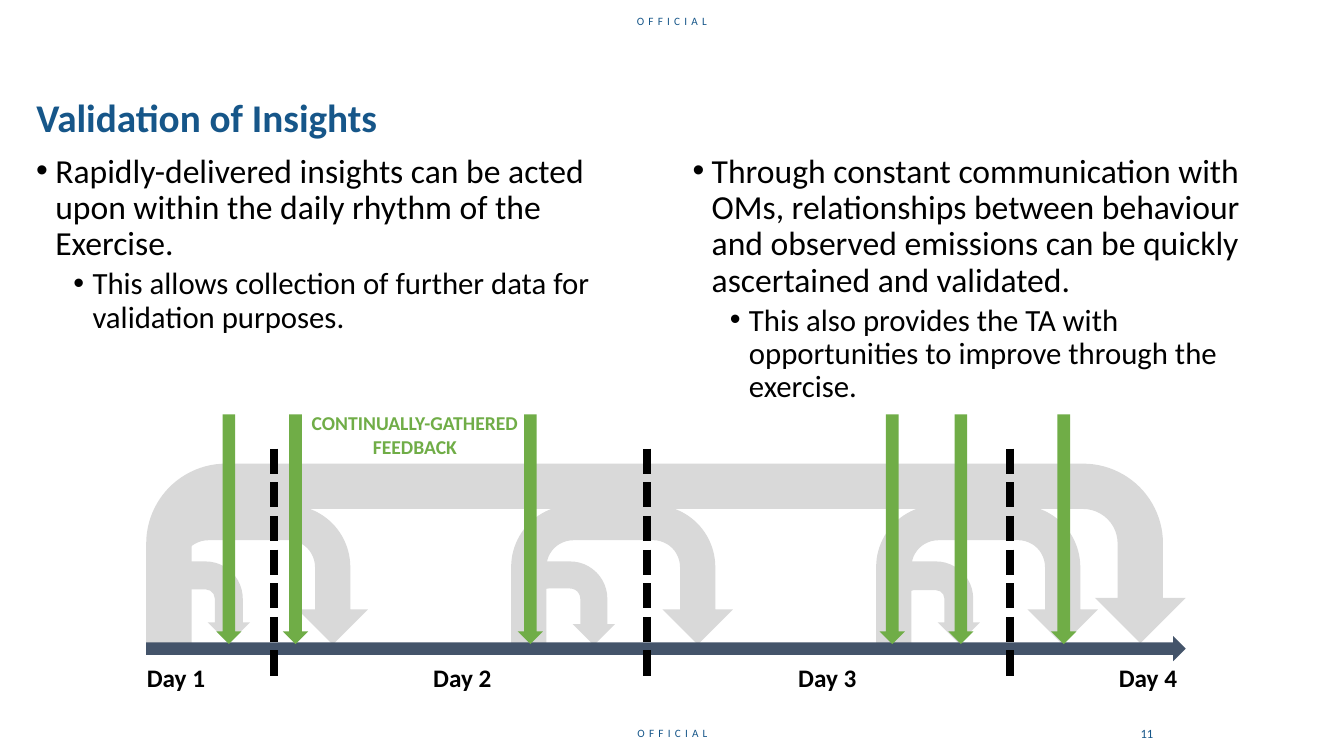
from lxml import etree
from pptx import Presentation
from pptx.dml.color import RGBColor
from pptx.enum.dml import MSO_LINE
from pptx.enum.shapes import MSO_CONNECTOR, MSO_SHAPE
from pptx.enum.text import MSO_ANCHOR, MSO_AUTO_SIZE, PP_ALIGN
from pptx.oxml.ns import qn
from pptx.util import Inches, Pt

LEFT, CENTER = PP_ALIGN.LEFT, PP_ALIGN.CENTER
TOP, MIDDLE = MSO_ANCHOR.TOP, MSO_ANCHOR.MIDDLE
RIGHT_ARROW, U_TURN = MSO_SHAPE.RIGHT_ARROW, MSO_SHAPE.U_TURN_ARROW
STRAIGHT, DASH = MSO_CONNECTOR.STRAIGHT, MSO_LINE.SQUARE_DOT

# Content
TITLE = "Validation of Insights"
COLUMNS = [
    [(0, "Rapidly-delivered insights can be acted upon within the daily rhythm of the Exercise."),
     (1, "This allows collection of further data for validation purposes.")],
    [(0, "Through constant communication with OMs, relationships between behaviour and "
         "observed emissions can be quickly ascertained and validated."),
     (1, "This also provides the TA with opportunities to improve through the exercise.")],
]
MARKING = "OFFICIAL"
MARKING_BOXES = [(4.03, 7.16, 5.28, 0.24), (0, 0.09, 13.33, 0.24)]
PAGE_NUMBER = "11"
FEEDBACK = "CONTINUALLY-GATHERED FEEDBACK"
DAYS = {"Day 1": 1.0, "Day 2": 3.84, "Day 3": 7.46, "Day 4": 10.64}
DAY_BREAKS = [2.72, 6.42, 10.02]
FEEDBACK_TIMES = [2.93, 2.27, 5.26, 8.85, 9.53, 10.55]
SHORT_LOOP_SHAFTS = [0.33, 0.32, 0.34]
SHORT_LOOP_ENDS = [0.97, 0.99, 0.97]

# Theme
THEME = {
    "font": "Calibri",
    "navy": "165689", "black": "000000", "green": "70AD47", "grey": "D9D9D9", "slate": "44546A",
}
STYLES = {
    "title": {"size": Pt(28), "bold": True, "color": "navy"},
    "bullet0": {"size": Pt(24), "bold": False, "color": "black"},
    "bullet1": {"size": Pt(22), "bold": False, "color": "black"},
    "marking": {"size": Pt(8), "bold": False, "color": "navy"},
    "page": {"size": Pt(9), "bold": False, "color": "navy"},
    "day": {"size": Pt(18), "bold": True, "color": "black"},
    "feedback": {"size": Pt(14), "bold": True, "color": "green"},
}
BULLET_LEVELS = [  # left margin in inches, space before
    {"margin": 0.19, "before": Pt(7.5)},
    {"margin": 0.56, "before": Pt(3.8)},
]
HANGING = 0.19

# Layout
BODY_LEFT, BODY_TOP, BODY_WIDTH, BODY_HEIGHT = 0.26, 1.48, 12.43, 2.68
COLUMN_GAP, INSET = 0.79, 0.1
AXIS_LEFT, AXIS_TOP, AXIS_WIDTH, AXIS_HEIGHT = 1.45, 6.31, 10.31, 0.25
DAY_STEP = 3.62
FEEDBACK_LENGTH, FEEDBACK_MIDDLE = 2.28, 5.25


def color(name):
    return RGBColor.from_string(THEME[name])


def write(paragraph, text, style):
    run = paragraph.add_run()
    run.text = text
    run.font.name = THEME["font"]
    for attribute, value in STYLES[style].items():
        if attribute == "color":
            run.font.color.rgb = color(value)
        else:
            setattr(run.font, attribute, value)
    return run


def add_text_frame(slide, box, wrap=True):
    frame = slide.shapes.add_textbox(*map(Inches, box)).text_frame
    frame.word_wrap = wrap
    frame.vertical_anchor = TOP
    return frame


def add_label(slide, box, text, style, wrap=True):
    paragraph = add_text_frame(slide, box, wrap).paragraphs[0]
    paragraph.alignment = CENTER
    return write(paragraph, text, style)


def add_bullets(slide, box, bullets):
    frame = add_text_frame(slide, box)
    for index, (level, text) in enumerate(bullets):
        paragraph = frame.add_paragraph() if index else frame.paragraphs[0]
        look = BULLET_LEVELS[level]
        properties = paragraph._p.get_or_add_pPr()
        properties.set("marL", str(Inches(look["margin"])))
        properties.set("indent", str(-Inches(HANGING)))
        etree.SubElement(properties, qn("a:buFont"), typeface="Arial")
        etree.SubElement(properties, qn("a:buChar"), char="•")
        paragraph.level = level
        paragraph.alignment = LEFT
        paragraph.line_spacing = 0.9
        if index:
            paragraph.space_before = look["before"]
        write(paragraph, text, f"bullet{level}")


def add_arrow(slide, kind, box, fill, adjustments=()):
    arrow = slide.shapes.add_shape(kind, *map(Inches, box))
    arrow.shadow.inherit = False
    arrow.fill.solid()
    arrow.fill.fore_color.rgb = color(fill)
    arrow.line.fill.background()
    for index, value in enumerate(adjustments):
        arrow.adjustments[index] = value
    return arrow


def add_loop(slide, box, shaft=0.25, end=0.99):
    add_arrow(slide, U_TURN, box, "grey", (shaft, 0.25, 0.25, 0.44, end))


def add_day_break(slide, x):
    divider = slide.shapes.add_connector(
        STRAIGHT, Inches(x), Inches(4.45), Inches(x), Inches(6.73))
    divider.line.color.rgb = color("black")
    divider.line.width = Pt(6)
    divider.line.dash_style = DASH
    etree.SubElement(divider._element.spPr, qn("a:effectLst"))


def add_title(slide):
    title = slide.shapes.title
    title.left, title.top, title.width, title.height = map(Inches, (0.26, 0.95, 12.34, 0.48))
    frame = title.text_frame
    frame.auto_size = MSO_AUTO_SIZE.NONE
    frame.vertical_anchor = MIDDLE
    paragraph = frame.paragraphs[0]
    paragraph.alignment = LEFT
    paragraph.line_spacing = 0.9
    write(paragraph, TITLE, "title")


def add_timeline(slide):
    add_loop(slide, (AXIS_LEFT, 4.6, AXIS_WIDTH, 1.8))
    day_starts = [AXIS_LEFT + day * DAY_STEP for day in range(3)]
    for start in day_starts:
        add_loop(slide, (start, 5.01, 2.2, 1.4))
    for start, shaft, end in zip(day_starts, SHORT_LOOP_SHAFTS, SHORT_LOOP_ENDS):
        add_loop(slide, (start, 5.57, 1.03, 0.84), shaft, end)
    add_arrow(slide, RIGHT_ARROW, (AXIS_LEFT, AXIS_TOP, AXIS_WIDTH, AXIS_HEIGHT), "slate")
    for x in DAY_BREAKS:
        add_day_break(slide, x)
    for day, left in DAYS.items():
        add_label(slide, (left, 6.52, 1.49, 0.4), day, "day")
    for x in FEEDBACK_TIMES:
        box = (x - FEEDBACK_LENGTH / 2, FEEDBACK_MIDDLE - AXIS_HEIGHT / 2,
               FEEDBACK_LENGTH, AXIS_HEIGHT)
        add_arrow(slide, RIGHT_ARROW, box, "green").rotation = 90
    add_label(slide, (2.79, 4.03, 2.65, 0.57), FEEDBACK, "feedback")


def main():
    deck = Presentation()
    deck.slide_width, deck.slide_height = Inches(13.33), Inches(7.5)
    slide = deck.slides.add_slide(deck.slide_layouts[5])

    add_label(slide, (11.2, 7.15, 0.35, 0.25), PAGE_NUMBER, "page", wrap=False)
    for box in MARKING_BOXES:
        run = add_label(slide, box, MARKING, "marking")
        run.font._element.set("spc", "300")

    add_title(slide)
    column_width = (BODY_WIDTH - 2 * INSET - COLUMN_GAP) / 2
    for index, bullets in enumerate(COLUMNS):
        left = BODY_LEFT + index * (column_width + COLUMN_GAP)
        add_bullets(slide, (left, BODY_TOP, column_width + 2 * INSET, BODY_HEIGHT), bullets)
    add_timeline(slide)

    deck.save("out.pptx")


if __name__ == "__main__":
    main()
